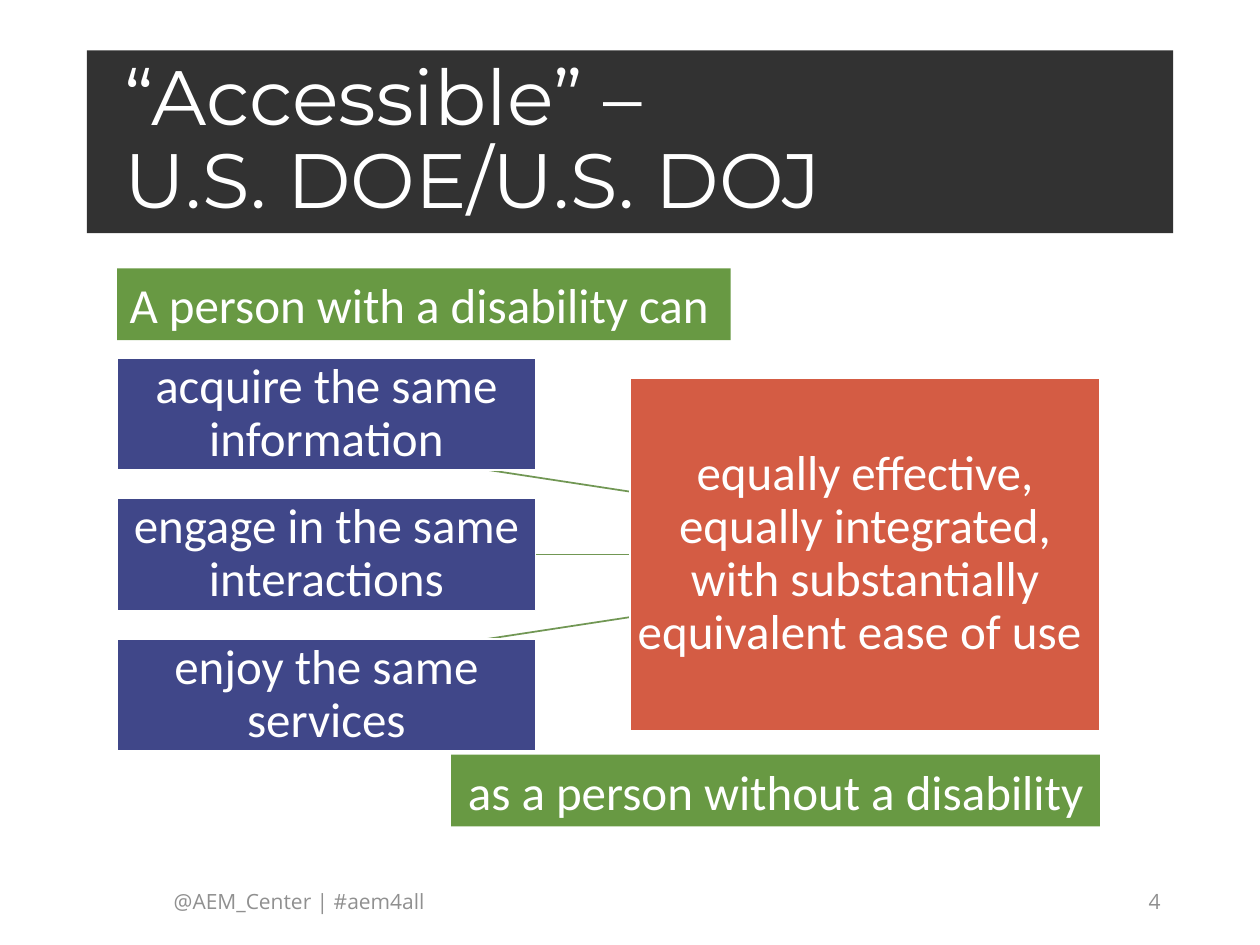
"""Build the slide on what accessible means to the U.S. DOE and U.S. DOJ."""
from lxml.etree import SubElement
from pptx import Presentation
from pptx.dml.color import RGBColor
from pptx.enum.shapes import MSO_CONNECTOR, MSO_SHAPE
from pptx.enum.text import MSO_ANCHOR as ANCHOR, PP_ALIGN as ALIGN
from pptx.oxml.ns import qn
from pptx.util import Inches, Pt

WHITE = RGBColor(0xFF, 0xFF, 0xFF)
DARK = RGBColor(0x32, 0x32, 0x32)
GREEN = RGBColor(0x68, 0x99, 0x43)
LINE_GREEN = RGBColor(0x71, 0x97, 0x54)
BLUE = RGBColor(0x40, 0x47, 0x89)
RED = RGBColor(0xD4, 0x5C, 0x44)
GRAY = RGBColor(0x90, 0x90, 0x90)

TITLE = "“Accessible” – \vU.S. DOE/U.S. DOJ"
OPENING = "A person with a disability can"
RIGHTS = ["acquire the same information", "engage in the same interactions", "enjoy the same services"]
MANNER = "equally effective, equally integrated, with substantially equivalent ease of use "
CLOSING = "as a person without a disability"
FOOTER, NUMBER = "@AEM_Center | #aem4all", "4"

LEFT, RIGHTS_TOP, RIGHTS_STEP = 0.93, 2.84, 1.115
HUB_X, HUB_Y = 8.26, 4.4
TIGHT = dict(align=ALIGN.CENTER, inset=(0.02, 0.02), spacing=0.9, line=WHITE)
SMALL = dict(size=12, font="Open Sans", color=GRAY)


def set_text(s, text, size=28, font="Calibri", color=WHITE, align=ALIGN.LEFT,
             inset=(0.1, 0.05), spacing=None):
    tf = s.text_frame
    tf.word_wrap = True
    tf.vertical_anchor = ANCHOR.MIDDLE
    tf.margin_left = tf.margin_right = Inches(inset[0])
    tf.margin_top = tf.margin_bottom = Inches(inset[1])
    tf.text = text
    p = tf.paragraphs[0]
    p.alignment, p.line_spacing = align, spacing
    for r in p.runs:
        r.font.size, r.font.name = Pt(size), font
        r.font.color.rgb = color


def add_box(slide, box, text, fill, line=None, **fmt):
    s = slide.shapes.add_shape(MSO_SHAPE.RECTANGLE, *map(Inches, box))
    s.shadow.inherit = False
    s.fill.solid()
    s.fill.fore_color.rgb = fill
    if line is None:
        s.line.fill.background()
    else:
        s.line.color.rgb, s.line.width = line, Pt(1)
    set_text(s, text, **fmt)


def add_link(slide, y):
    c = slide.shapes.add_connector(MSO_CONNECTOR.STRAIGHT, *map(Inches, (HUB_X, HUB_Y, LEFT, y)))
    c.line.color.rgb, c.line.width = LINE_GREEN, Pt(1)
    SubElement(c._element.spPr, qn("a:effectLst"))


def main():
    prs = Presentation()
    prs.slide_width, prs.slide_height = Inches(10), Inches(7.5)
    slide = prs.slides.add_slide(prs.slide_layouts[5])

    title = slide.shapes.title
    title.left, title.top, title.width, title.height = map(Inches, (0.69, 0.4, 8.62, 1.45))
    title.fill.solid()
    title.fill.fore_color.rgb = DARK
    set_text(title, TITLE, size=44, font="Montserrat", inset=(0.3, 0.05), spacing=0.9)

    add_box(slide, (LEFT, 2.13, 4.87, 0.57), OPENING, GREEN)
    for i in range(len(RIGHTS)):
        add_link(slide, HUB_Y + (i - 1) * 1.12)
    add_box(slide, (5, 3, 3.73, 2.8), MANNER, RED, **TIGHT)
    for i, text in enumerate(RIGHTS):
        add_box(slide, (LEFT, RIGHTS_TOP + i * RIGHTS_STEP, 3.32, 0.89), text, BLUE, **TIGHT)
    add_box(slide, (3.58, 5.99, 5.15, 0.57), CLOSING, GREEN, align=ALIGN.CENTER)

    for text, x, w, align in [(NUMBER, 7.06, 2.25, ALIGN.RIGHT), (FOOTER, 1.28, 3.49, ALIGN.LEFT)]:
        s = slide.shapes.add_textbox(*map(Inches, (x, 6.95, w, 0.4)))
        set_text(s, text, align=align, **SMALL)

    prs.save("out.pptx")


if __name__ == "__main__":
    main()
